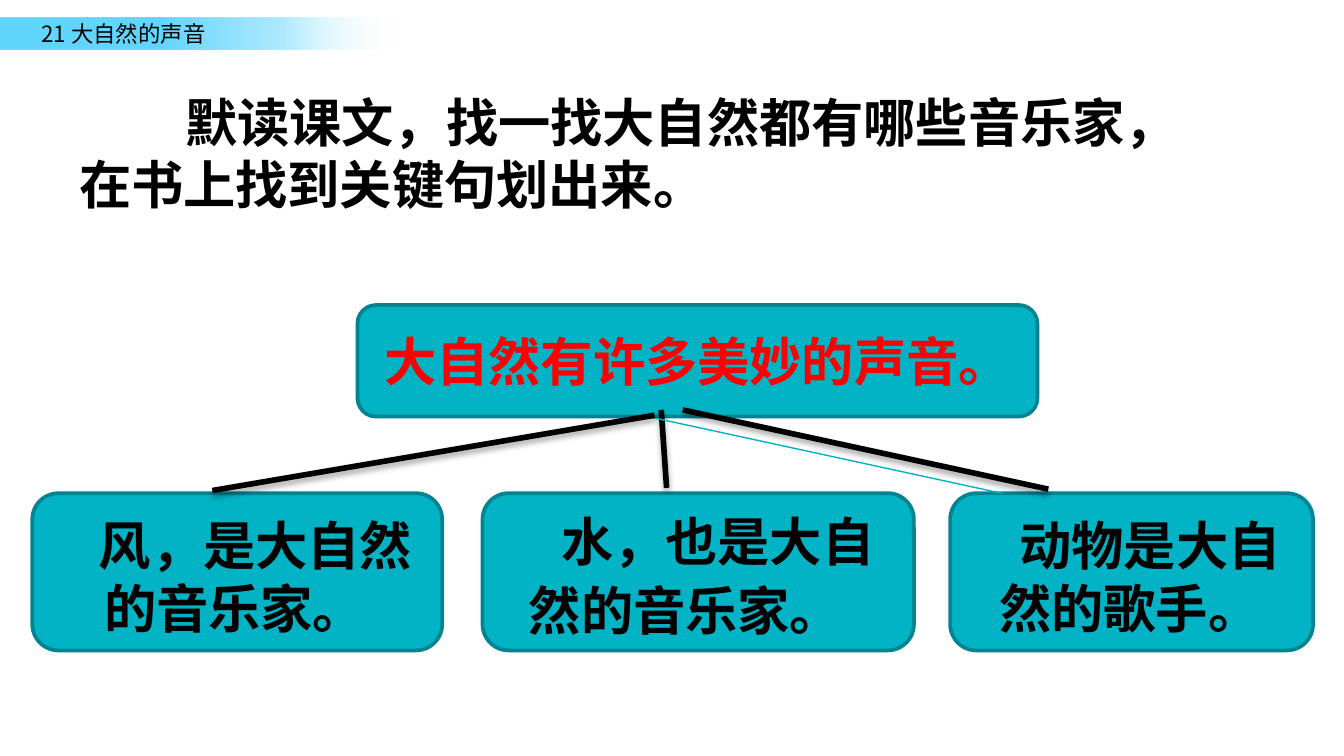
from lxml import etree
from pptx import Presentation
from pptx.dml.color import RGBColor
from pptx.enum.shapes import MSO_CONNECTOR, MSO_SHAPE
from pptx.enum.text import MSO_ANCHOR, PP_ALIGN
from pptx.oxml import parse_xml
from pptx.oxml.ns import nsdecls, qn
from pptx.util import Inches, Pt

RECTANGLE, ROUNDED = MSO_SHAPE.RECTANGLE, MSO_SHAPE.ROUNDED_RECTANGLE
STRAIGHT = MSO_CONNECTOR.STRAIGHT
TOP, MIDDLE = MSO_ANCHOR.TOP, MSO_ANCHOR.MIDDLE
LEFT, CENTER = PP_ALIGN.LEFT, PP_ALIGN.CENTER

WIDTH = 10
HEIGHT = WIDTH * 9 / 16
FONT = "Noto Sans CJK SC"
BLACK, RED, TEAL, DARK_TEAL, THIN_TEAL = "000000", "FF0000", "02B3C5", "018492", "00B1C3"
BODY = {"size": Pt(28), "bold": True}
SMALL = {"size": Pt(12), "bold": False}

LESSON = "21 大自然的声音"
TASK = "默读课文，找一找大自然都有哪些音乐家，在书上找到关键句划出来。"
TOPIC = "大自然有许多美妙的声音。"
MUSICIANS = [
    {"text": "风，是大自然的音乐家。", "left": 0.24, "width": 3.05,
     "format": {"margin": 0.38, "indent": -0.04, "inset": 0.11}},
    {"text": "水，也是大自然的音乐家。", "left": 3.59, "width": 3.21,
     "format": {"margin": 0.19, "indent": 0.24, "spacing": 1.1}},
    {"text": "动物是大自然的歌手。", "left": 7.07, "width": 2.7,
     "format": {"margin": 0.21, "indent": 0.15, "inset": 0.11}},
]
MUSICIAN_TOP, MUSICIAN_HEIGHT = 3.67, 1.17
BRANCHES = [
    ((4.92, 3.05), (4.96, 3.63), BLACK, 3),
    ((4.73, 3.08), (7.45, 3.67), THIN_TEAL, 0.75),
    ((5.08, 3.05), (7.8, 3.64), BLACK, 3),
    ((4.87, 3.09), (1.58, 3.65), BLACK, 3),
]
BANNER_STOPS = [(40, "63D6FF", 100), (70, "97E4FF", 76), (97, "FFFFFF", 0)]
SHADOW = (
    '<a:outerShdw blurRad="40000" dist="23000" dir="5400000" rotWithShape="0">'
    '<a:srgbClr val="000000"><a:alpha val="35000"/></a:srgbClr></a:outerShdw>'
)


def colour(value):
    return RGBColor.from_string(value)


def write(shape, text, style, ink=BLACK, align=LEFT, anchor=TOP,
          margin=0, indent=0, spacing=1.0, inset=0.05, wrap=True):
    frame = shape.text_frame
    frame.word_wrap = wrap
    frame.vertical_anchor = anchor
    frame.margin_top = Inches(inset)
    para = frame.paragraphs[0]
    para.alignment = align
    para.line_spacing = spacing
    properties = para._p.get_or_add_pPr()
    properties.set("marL", str(Inches(margin)))
    properties.set("indent", str(Inches(indent)))
    span = para.add_run()
    span.text = text
    for name, value in {**style, "name": FONT}.items():
        setattr(span.font, name, value)
    span.font.color.rgb = colour(ink)
    etree.SubElement(span.font._element, qn("a:ea"), typeface=FONT)


def add_box(page, area, kind=ROUNDED):
    box = page.shapes.add_shape(kind, *map(Inches, area))
    box.shadow.inherit = False
    box.fill.solid()
    box.fill.fore_color.rgb = colour(TEAL)
    box.line.color.rgb = colour(DARK_TEAL)
    box.line.width = Pt(2)
    return box


def add_banner(page, area):
    banner = add_box(page, area, RECTANGLE)
    banner.line.fill.background()
    stops = "".join(
        f'<a:gs pos="{place * 1000}"><a:srgbClr val="{tint}">'
        f'<a:alpha val="{alpha * 1000}"/></a:srgbClr></a:gs>'
        for place, tint, alpha in BANNER_STOPS
    )
    gradient = parse_xml(
        f'<a:gradFill {nsdecls("a")} rotWithShape="1"><a:gsLst>{stops}</a:gsLst>'
        '<a:lin ang="0" scaled="0"/></a:gradFill>'
    )
    properties = banner._element.spPr
    properties.replace(properties.find(qn("a:solidFill")), gradient)


def add_branch(page, start, end, ink, weight):
    branch = page.shapes.add_connector(STRAIGHT, *map(Inches, start + end))
    branch.line.color.rgb = colour(ink)
    branch.line.width = Pt(weight)
    effect = SHADOW if ink == BLACK else ""
    branch._element.spPr.append(
        parse_xml(f'<a:effectLst {nsdecls("a")}>{effect}</a:effectLst>'))


def main():
    """Build the slide on the musicians of nature."""
    deck = Presentation()
    deck.slide_width, deck.slide_height = Inches(WIDTH), Inches(HEIGHT)
    page = deck.slides.add_slide(deck.slide_layouts[6])

    add_banner(page, (0, 0.13, 3.03, 0.24))
    lesson = page.shapes.add_textbox(*map(Inches, (0.21, 0.1, 1.46, 0.3)))
    write(lesson, LESSON, SMALL, wrap=False)
    task = page.shapes.add_textbox(*map(Inches, (0.49, 0.62, 8.73, 1.04)))
    write(task, TASK, BODY, indent=0.79)

    topic = add_box(page, (2.66, 2.27, 5.06, 0.83))
    write(topic, TOPIC, BODY, RED, CENTER, MIDDLE)
    for item in MUSICIANS:
        box = add_box(page, (item["left"], MUSICIAN_TOP, item["width"], MUSICIAN_HEIGHT))
        write(box, item["text"], BODY, anchor=MIDDLE, **item["format"])
    for branch in BRANCHES:
        add_branch(page, *branch)
    deck.save("out.pptx")


if __name__ == "__main__":
    main()
